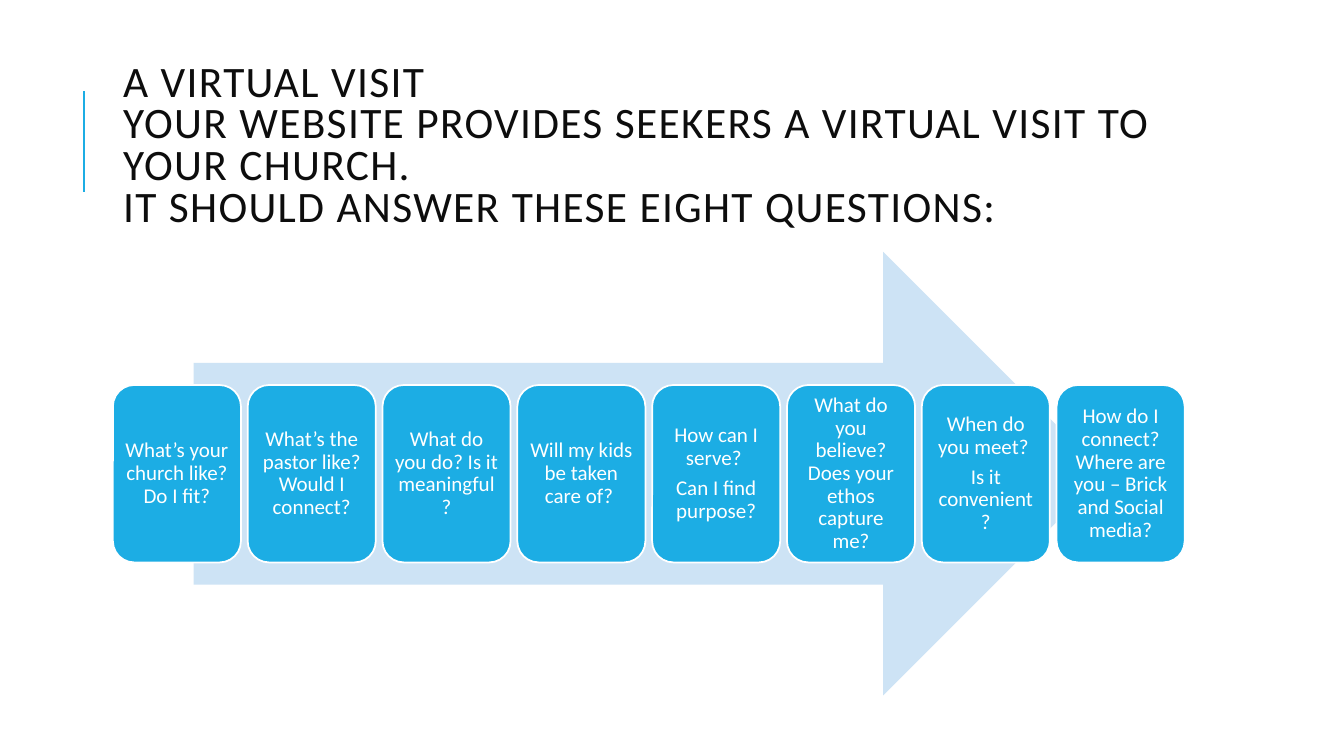
from lxml import etree
from pptx import Presentation
from pptx import util as u
from pptx.dml.color import RGBColor
from pptx.enum import shapes, text
from pptx.oxml.ns import qn

BLUE, WHITE = "1CADE4", "FFFFFF"


def color(hex_value):
    return RGBColor.from_string(hex_value)


def style_paragraph(paragraph, size, hex_value, align, line_spacing):
    paragraph.alignment = align
    paragraph.line_spacing = line_spacing
    paragraph.space_before = u.Pt(0)
    paragraph.font.name = "Calibri"
    paragraph.font.size = u.Pt(size)
    paragraph.font.color.rgb = color(hex_value)


presentation = Presentation()
presentation.slide_width = u.Inches(13.33)
presentation.slide_height = u.Inches(7.5)
slide = presentation.slides.add_slide(presentation.slide_layouts[5])

# Accent line beside the title
accent = slide.shapes.add_connector(
    shapes.MSO_CONNECTOR.STRAIGHT,
    u.Inches(0.83), u.Inches(1.9), u.Inches(0.83), u.Inches(0.9))
accent.line.color.rgb = color(BLUE)
accent.line.width = u.Pt(1.5)
etree.SubElement(accent._element.spPr, qn("a:effectLst"))

# Title
title = slide.shapes.title
title.left, title.top = u.Inches(1.12), u.Inches(0.64)
title.width, title.height = u.Inches(10.63), u.Inches(1.64)
frame = title.text_frame
frame.word_wrap = True
frame.auto_size = text.MSO_AUTO_SIZE.NONE
frame.vertical_anchor = text.MSO_ANCHOR.MIDDLE
frame.text = (
    "A VIRTUAL VISIT\v"
    "YOUR WEBSITE PROVIDES SEEKERS A VIRTUAL VISIT TO YOUR CHURCH. \v"
    "IT SHOULD ANSWER THESE EIGHT QUESTIONS:")
style_paragraph(frame.paragraphs[0], 31, "0D0D0D", text.PP_ALIGN.LEFT, 0.8)
for run in frame.paragraphs[0].runs:
    run._r.get_or_add_rPr().set("spc", "100")

# Arrow behind the questions
arrow = slide.shapes.add_shape(
    shapes.MSO_SHAPE.RIGHT_ARROW,
    u.Inches(1.92), u.Inches(2.5), u.Inches(9.04), u.Inches(4.4))
arrow.shadow.inherit = False
arrow.fill.solid()
arrow.fill.fore_color.rgb = color("CDE3F5")
arrow.line.fill.background()

# Question cards, evenly spaced
questions = [
    "What’s your church like? Do I fit?",
    "What’s the pastor like? Would I connect?",
    "What do you do? Is it meaningful?",
    "Will my kids be taken care of? ",
    "How can I serve? \nCan I find purpose?",
    "What do you believe? Does your ethos capture me?",
    "When do you meet? \nIs it convenient?",
    "How do I connect? Where are you – Brick and Social media?",
]
first_left, last_left = 1.12, 10.48
card_step = (last_left - first_left) / (len(questions) - 1)

for index, question in enumerate(questions):
    card = slide.shapes.add_shape(
        shapes.MSO_SHAPE.ROUNDED_RECTANGLE,
        u.Inches(first_left + index * card_step), u.Inches(3.82),
        u.Inches(1.27), u.Inches(1.76))
    card.shadow.inherit = False
    card.fill.solid()
    card.fill.fore_color.rgb = color(BLUE)
    card.line.color.rgb = color(WHITE)
    card.line.width = u.Pt(1.25)
    frame = card.text_frame
    frame.word_wrap = True
    frame.vertical_anchor = text.MSO_ANCHOR.MIDDLE
    frame.margin_left = frame.margin_right = u.Inches(0.06)
    frame.margin_top = frame.margin_bottom = u.Inches(0.06)
    frame.text = question
    for paragraph in frame.paragraphs:
        style_paragraph(paragraph, 15, WHITE, text.PP_ALIGN.CENTER, 0.9)
    for paragraph in frame.paragraphs[:-1]:
        paragraph.space_after = u.Pt(5.25)

presentation.save("out.pptx")
